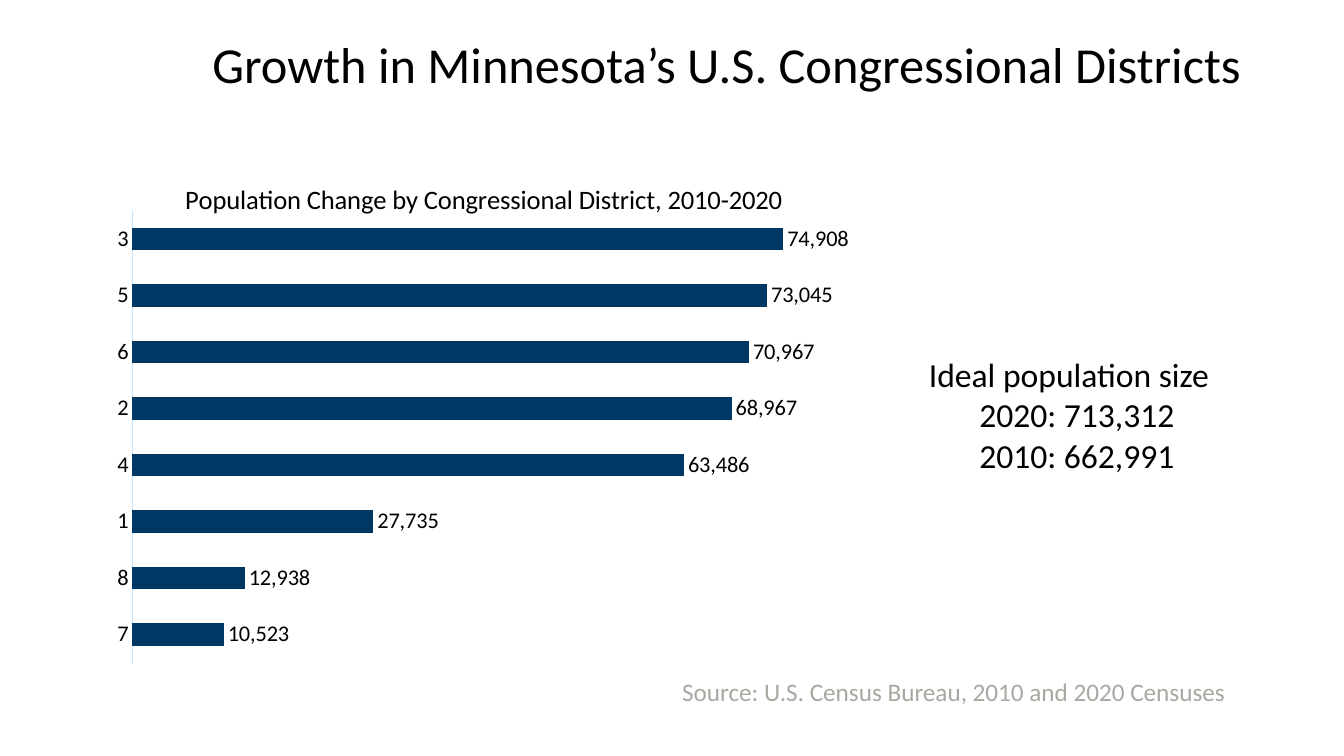
from lxml import etree
from pptx import Presentation
from pptx import util as u
from pptx.chart import data as chart_data
from pptx.dml import color
from pptx.enum import chart as ch
from pptx.enum import text
from pptx.oxml import ns

FONT = "Calibri"
COLORS = {"ink": "000000", "bar": "003865", "axis": "C2E4FF", "source": "A8A8A1"}
POPULATION_CHANGE = {
    "7": 10523, "8": 12938, "1": 27735, "4": 63486,
    "2": 68967, "6": 70967, "5": 73045, "3": 74908,
}


def rgb(name):
    return color.RGBColor.from_string(COLORS[name])


def style(font, size, name="ink"):
    font.name = FONT
    font.size = u.Pt(size)
    font.bold = False
    font.color.rgb = rgb(name)


def box(left, top, width, height):
    return [u.Cm(length) for length in (left, top, width, height)]


def set_layout(parent, **values):
    """Place a chart title or plot area by fractions of the chart."""
    layout = parent.get_or_add_layout() if hasattr(parent, "get_or_add_layout") else parent.find(ns.qn("c:layout"))
    if layout is None:
        layout = etree.Element(ns.qn("c:layout"))
        parent.insert(0, layout)
    for child in list(layout):
        layout.remove(child)
    manual = etree.SubElement(layout, ns.qn("c:manualLayout"))
    for tag, value in values.items():
        etree.SubElement(manual, ns.qn(f"c:{tag}")).set("val", str(value))


def add_title(slide, area):
    title = slide.shapes.title
    title.left, title.top, title.width, title.height = area
    frame = title.text_frame
    frame.text = "Growth in Minnesota’s U.S. Congressional Districts"
    frame.vertical_anchor = text.MSO_ANCHOR.MIDDLE
    heading = frame.paragraphs[0]
    heading.alignment = text.PP_ALIGN.RIGHT
    heading.line_spacing = 0.9
    style(heading.runs[0].font, 36)


def add_growth_chart(slide, area):
    growth = chart_data.CategoryChartData(number_format="#,##0")
    growth.categories = list(POPULATION_CHANGE)
    growth.add_series("Population change", list(POPULATION_CHANGE.values()))
    chart = slide.shapes.add_chart(ch.XL_CHART_TYPE.BAR_CLUSTERED, *area, growth).chart
    style(chart.font, 16)
    chart.has_legend = False

    chart.has_title = True
    caption = chart.chart_title.text_frame
    caption.text = "Population Change by Congressional District, 2010-2020"
    style(caption.paragraphs[0].runs[0].font, 19)
    chart.chart_title.include_in_layout = False
    set_layout(chart.chart_title._element, xMode="edge", yMode="edge", x=0.11, y=0.05)

    districts = chart.category_axis
    districts.major_tick_mark = ch.XL_TICK_MARK.NONE
    districts.format.line.color.rgb = rgb("axis")
    districts.format.line.width = u.Pt(0.75)
    style(districts.tick_labels.font, 16)

    people = chart.value_axis
    people.visible = False
    people.has_major_gridlines = False
    people.minimum_scale, people.maximum_scale = 0, 80000

    bars = chart.plots[0]
    bars.gap_width, bars.overlap = 150, -25
    bars.vary_by_categories = False
    fill = bars.series[0].format.fill
    fill.solid()
    fill.fore_color.rgb = rgb("bar")
    bars.has_data_labels = True
    labels = bars.data_labels
    labels.show_value = True
    labels.position = ch.XL_LABEL_POSITION.OUTSIDE_END
    labels.number_format, labels.number_format_is_linked = "#,##0", False
    style(labels.font, 16)
    plot_area = chart._chartSpace.find(".//" + ns.qn("c:plotArea"))
    set_layout(plot_area, layoutTarget="inner", xMode="edge", yMode="edge",
               x=0.05, y=0.115, w=0.87, h=0.856)


def add_text(slide, area, lines, size, name="ink"):
    frame = slide.shapes.add_textbox(*area).text_frame
    frame.word_wrap = True
    frame.text = "\n".join(lines)
    for paragraph in frame.paragraphs:
        style(paragraph.runs[0].font, size, name)
    return frame


def add_ideal_size(slide, area):
    lines = ["Ideal population size", "2020: 713,312", "2010: 662,991"]
    frame = add_text(slide, area, lines, 24)
    for year in frame.paragraphs[1:]:
        year._p.get_or_add_pPr().set("marL", str(u.Cm(1.27)))


def main():
    deck = Presentation()
    deck.slide_width, deck.slide_height = u.Cm(33.87), u.Cm(19.05)
    slide = deck.slides.add_slide(deck.slide_layouts[5])
    add_title(slide, box(2.33, 0.43, 29.21, 2.54))
    add_growth_chart(slide, box(2.33, 3.78, 20.14, 13.31))
    add_ideal_size(slide, box(23.16, 8.79, 8.05, 3.33))
    add_text(slide, box(16.94, 16.92, 14.73, 1.02),
             ["Source: U.S. Census Bureau, 2010 and 2020 Censuses"], 18, "source")
    deck.save("out.pptx")


if __name__ == "__main__":
    main()
